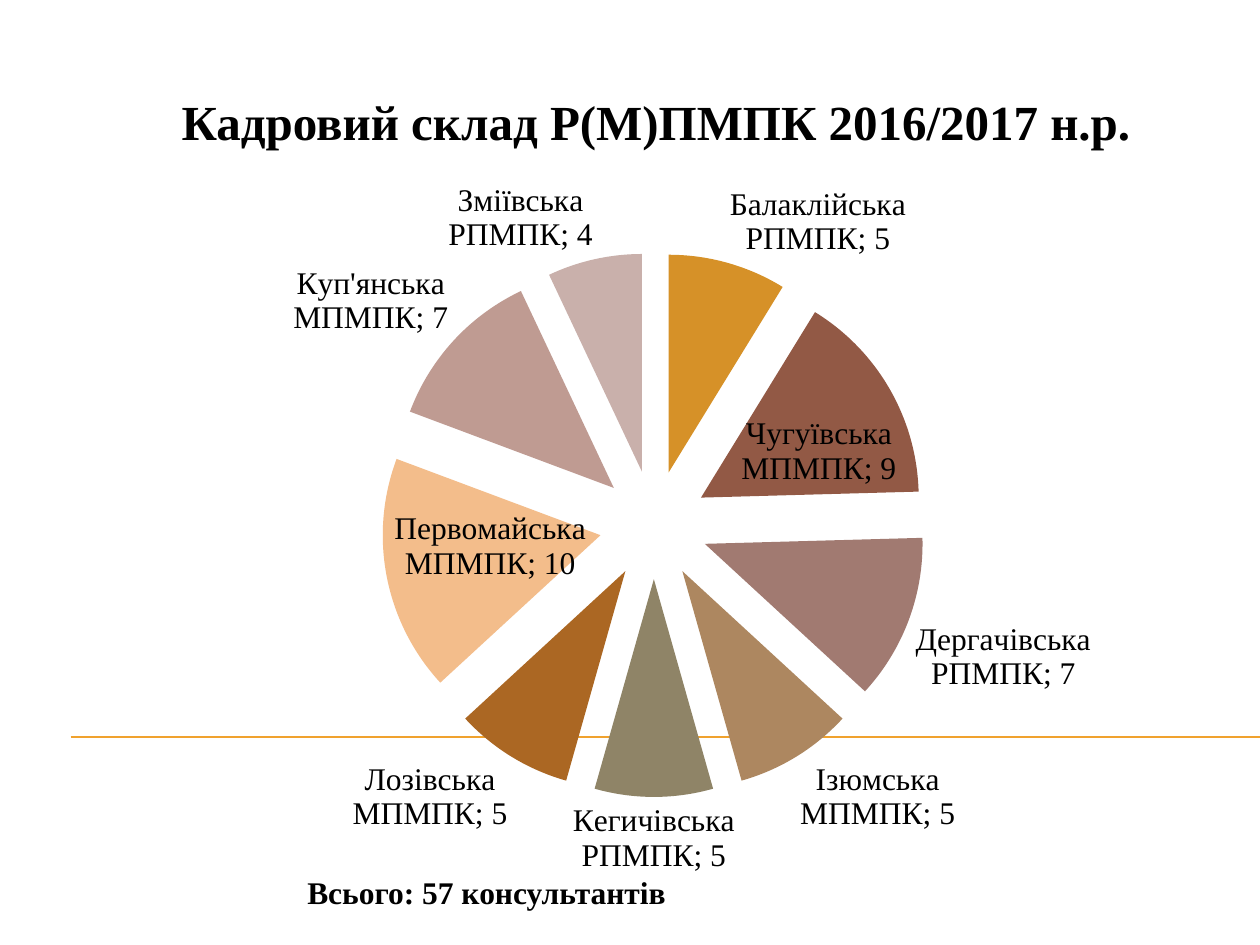
"""Build the staff pie chart slide."""
from lxml import etree
from pptx import Presentation
from pptx.chart.data import CategoryChartData as ChartData
from pptx.dml.color import RGBColor as RGB
from pptx.enum.chart import XL_CHART_TYPE as Kind, XL_LABEL_POSITION as Spot
from pptx.enum.shapes import MSO_CONNECTOR as Link
from pptx.enum.text import MSO_AUTO_SIZE as Fit, PP_ALIGN as Align
from pptx.oxml import parse_xml
from pptx.oxml.ns import nsdecls, qn
from pptx.util import Inches, Pt

FONT = "Times New Roman"
BLACK = RGB(0, 0, 0)
GOLD = RGB(0xF0, 0xA2, 0x2E)
STAFF = [
    ("Балаклійська РПМПК", 5, RGB(0xD6, 0x91, 0x28)),
    ("Чугуївська МПМПК", 9, RGB(0x92, 0x59, 0x45)),
    ("Дергачівська РПМПК", 7, RGB(0xA1, 0x7A, 0x71)),
    ("Ізюмська МПМПК", 5, RGB(0xAD, 0x87, 0x60)),
    ("Кегичівська РПМПК", 5, RGB(0x8F, 0x84, 0x67)),
    ("Лозівська МПМПК", 5, RGB(0xAB, 0x67, 0x23)),
    ("Первомайська МПМПК", 10, RGB(0xF3, 0xBD, 0x8B)),
    ("Куп'янська МПМПК", 7, RGB(0xBF, 0x9B, 0x92)),
    ("Зміївська РПМПК", 4, RGB(0xC9, 0xB0, 0xAB)),
]


def add_text(slide, text, box, size, align):
    frame = slide.shapes.add_textbox(*map(Inches, box)).text_frame
    frame.word_wrap = False
    frame.auto_size = Fit.SHAPE_TO_FIT_TEXT
    para = frame.paragraphs[0]
    para.alignment = align
    run = para.add_run()
    run.text = text
    font = run.font
    font.name, font.size, font.bold = FONT, Pt(size), True
    font.color.rgb = BLACK


deck = Presentation()
deck.slide_width, deck.slide_height = Inches(10), Inches(7.5)
slide = deck.slides.add_slide(deck.slide_layouts[6])

rule = slide.shapes.add_connector(
    Link.STRAIGHT, Inches(0.56), Inches(5.85), Inches(10), Inches(5.85))
rule.line.color.rgb = GOLD
rule.line.width = Pt(0.75)
etree.SubElement(rule._element.spPr, qn("a:effectLst"))

data = ChartData()
data.categories = [name for name, count, color in STAFF]
data.add_series("Series 1", [count for name, count, color in STAFF])
chart = slide.shapes.add_chart(
    Kind.PIE, Inches(0.51), Inches(1.31), Inches(9), Inches(5.77), data).chart
chart.has_title = False
chart.has_legend = False
chart.font.name, chart.font.size = FONT, Pt(18)
chart.font.color.rgb = BLACK

plot = chart.plots[0]
plot.vary_by_categories = True
plot.has_data_labels = True
labels = plot.data_labels
labels.show_category_name = True
labels.show_value = True
labels.show_percentage = False
labels.position = Spot.BEST_FIT
labels.font.name, labels.font.size = FONT, Pt(18)
labels.font.color.rgb = BLACK
mark = parse_xml(f'<c:separator {nsdecls("c")}>; </c:separator>')
labels._element.find(qn("c:showBubbleSize")).addnext(mark)

pie = plot.series[0]
pie.format.line.fill.background()
blast = parse_xml(f'<c:explosion {nsdecls("c")} val="25"/>')
pie._element.find(qn("c:spPr")).addnext(blast)
for i, (name, count, color) in enumerate(STAFF):
    look = pie.points[i].format
    look.fill.solid()
    look.fill.fore_color.rgb = color
    look.line.fill.background()
    point = pie._element.findall(qn("c:dPt"))[i]
    point.find(qn("c:spPr")).addprevious(
        parse_xml(f'<c:explosion {nsdecls("c")} val="25"/>'))

area = chart._chartSpace.chart.plotArea
for old in area.findall(qn("c:layout")):
    area.remove(old)
layout = etree.Element(qn("c:layout"))
manual = etree.SubElement(layout, qn("c:manualLayout"))
for tag, val in [("layoutTarget", "inner"), ("xMode", "edge"), ("yMode", "edge"),
                 ("x", "0.28"), ("y", "0.12"), ("w", "0.48"), ("h", "0.75")]:
    etree.SubElement(manual, qn(f"c:{tag}")).set("val", val)
area.insert(0, layout)

add_text(slide, "Кадровий склад Р(М)ПМПК 2016/2017 н.р.",
         (1.3, 0.68, 7.81, 0.57), 28, Align.CENTER)
add_text(slide, "Всього: 57 консультантів",
         (2.34, 6.88, 3.08, 0.4), 18, Align.LEFT)

deck.save("out.pptx")
